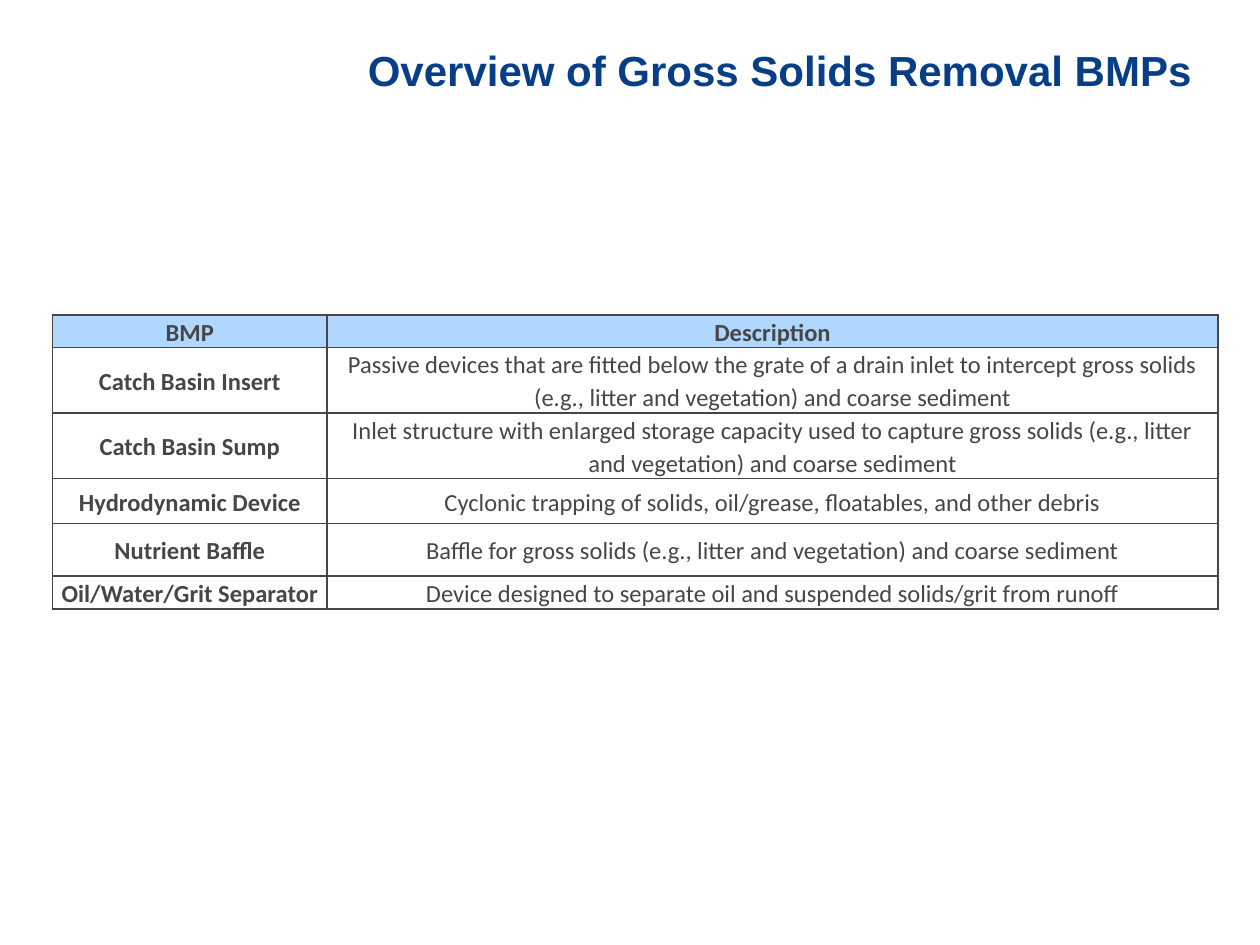
import dataclasses

import lxml.etree
import pptx
import pptx.dml.color
import pptx.enum.text
import pptx.oxml.ns
import pptx.util

Pt = pptx.util.Pt
RGBColor = pptx.dml.color.RGBColor
PP_ALIGN = pptx.enum.text.PP_ALIGN
MIDDLE = pptx.enum.text.MSO_ANCHOR.MIDDLE
qn = pptx.oxml.ns.qn


@dataclasses.dataclass(frozen=True)
class Theme:
    title_color: str = "073E87"
    text_color: str = "464648"
    header_fill: str = "B0D7FF"
    title_font: str = "Arial"
    table_font: str = "Calibri"
    title_size: int = 24
    table_size: int = 14


theme = Theme()


def add_text(paragraph, text, font_name, size, color, bold):
    run = paragraph.add_run()
    run.text = text
    run.font.name = font_name
    run.font.size = Pt(size)
    run.font.bold = bold
    run.font.color.rgb = RGBColor.from_string(color)


def add_borders(cell, color, width):
    properties = cell._tc.get_or_add_tcPr()
    for side in ("lnL", "lnR", "lnT", "lnB"):
        line = lxml.etree.SubElement(properties, qn(f"a:{side}"), w=str(Pt(width)))
        fill = lxml.etree.SubElement(line, qn("a:solidFill"))
        lxml.etree.SubElement(fill, qn("a:srgbClr"), val=color)


presentation = pptx.Presentation()
presentation.slide_width = Pt(720)
presentation.slide_height = Pt(540)
slide = presentation.slides.add_slide(presentation.slide_layouts[6])

title = slide.shapes.add_textbox(Pt(171.4), Pt(5.8), Pt(512.6), Pt(67.7))
title_frame = title.text_frame
title_frame.word_wrap = True
title_frame.vertical_anchor = MIDDLE
title_frame.margin_left = title_frame.margin_right = Pt(3)
title_frame.margin_top = title_frame.margin_bottom = Pt(3)
title_paragraph = title_frame.paragraphs[0]
title_paragraph.alignment = PP_ALIGN.RIGHT
add_text(title_paragraph, "Overview of Gross Solids Removal BMPs",
         theme.title_font, theme.title_size, theme.title_color, True)

rows = [
    ("BMP", "Description"),
    ("Catch Basin Insert",
     "Passive devices that are fitted below the grate of a drain inlet to intercept "
     "gross solids (e.g., litter and vegetation) and coarse sediment"),
    ("Catch Basin Sump",
     "Inlet structure with enlarged storage capacity used to capture gross solids "
     "(e.g., litter and vegetation) and coarse sediment"),
    ("Hydrodynamic Device",
     "Cyclonic trapping of solids, oil/grease, floatables, and other debris"),
    ("Nutrient Baffle",
     "Baffle for gross solids (e.g., litter and vegetation) and coarse sediment"),
    ("Oil/Water/Grit Separator",
     "Device designed to separate oil and suspended solids/grit from runoff"),
]
row_heights = [18.7, 37.4, 37.4, 25.8, 30, 18.7]
column_widths = [157, 509]

table_frame = slide.shapes.add_table(
    len(rows), len(column_widths),
    Pt(30), Pt(180), Pt(sum(column_widths)), Pt(sum(row_heights)))
table = table_frame.table
table.horz_banding = False

for column, width in zip(table.columns, column_widths):
    column.width = Pt(width)

for row_index, (texts, height) in enumerate(zip(rows, row_heights)):
    table.rows[row_index].height = Pt(height)
    for column_index, text in enumerate(texts):
        is_header = row_index == 0
        cell = table.cell(row_index, column_index)
        cell.vertical_anchor = MIDDLE
        cell.margin_left = cell.margin_right = Pt(3)
        cell.margin_top = cell.margin_bottom = Pt(0)
        add_borders(cell, theme.text_color, 1)
        if is_header:
            cell.fill.solid()
            cell.fill.fore_color.rgb = RGBColor.from_string(theme.header_fill)
        else:
            cell.fill.background()
        paragraph = cell.text_frame.paragraphs[0]
        paragraph.alignment = PP_ALIGN.CENTER
        paragraph.line_spacing = 1.1
        add_text(paragraph, text, theme.table_font, theme.table_size,
                 theme.text_color, is_header or column_index == 0)

presentation.save("out.pptx")
